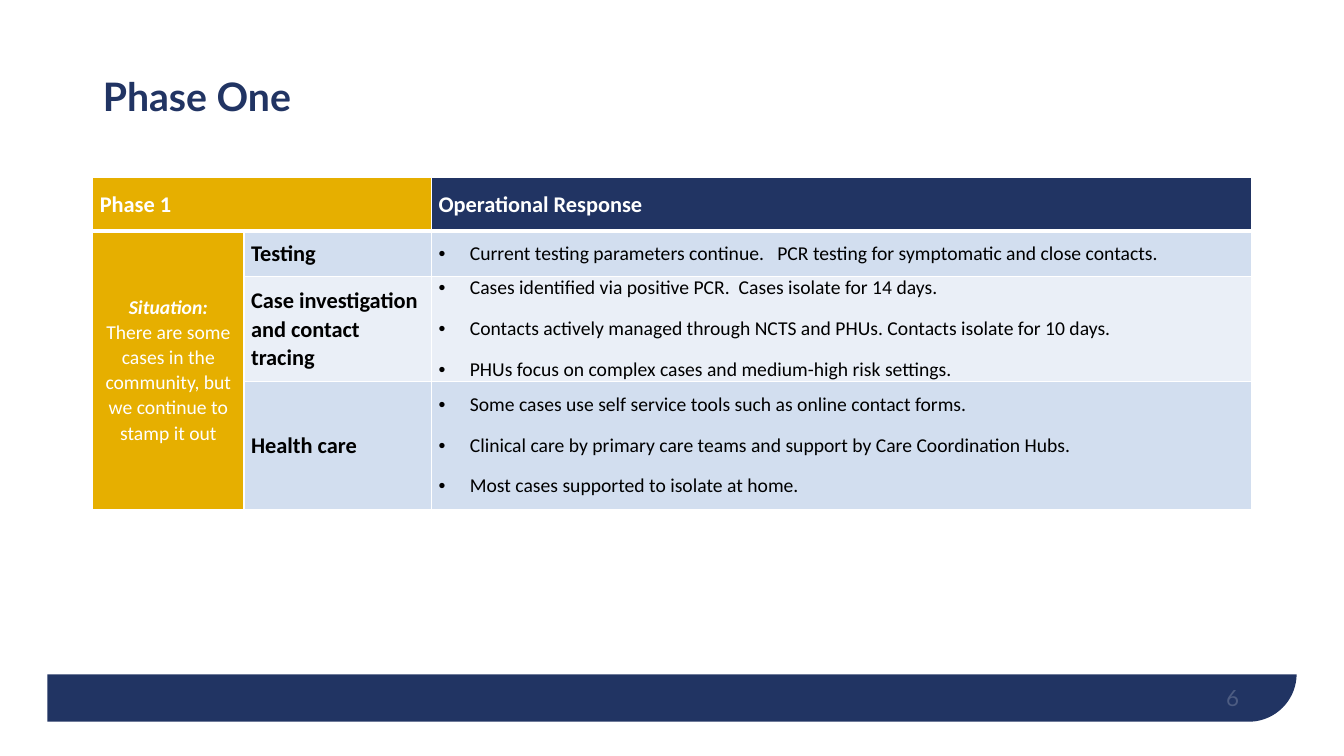
"""Build the Phase One slide with its operational response table."""
import pptx
import pptx.util
import pptx.dml.color
import pptx.enum.shapes
import pptx.enum.text
import pptx.oxml.ns
from lxml import etree

Inches, Pt = pptx.util.Inches, pptx.util.Pt
ALIGN, ANCHOR = pptx.enum.text.PP_ALIGN, pptx.enum.text.MSO_ANCHOR
SHAPE = pptx.enum.shapes.MSO_SHAPE
qn = pptx.oxml.ns.qn
NAVY, GOLD, WHITE, BLACK = "213463", "E6AF00", "FFFFFF", "000000"
BLUE, PALE = "D2DEEF", "EAEFF7"


def paint(target, color):
    if hasattr(target, "solid"):
        target.solid()
        target = target.fore_color
    target.rgb = pptx.dml.color.RGBColor.from_string(color)


def write(paragraph, text, size=16, font="Calibri", color=BLACK, bold=False, italic=False,
          align=ALIGN.LEFT, line=1.0, before=0, after=0):
    paragraph.alignment, paragraph.line_spacing = align, line
    paragraph.space_before, paragraph.space_after = Pt(before), Pt(after)
    run = paragraph.add_run()
    run.text = text
    run.font.size, run.font.name = Pt(size), font
    run.font.bold, run.font.italic = bold, italic
    paint(run.font.color, color)
    return run


deck = pptx.Presentation()
deck.slide_width, deck.slide_height = Inches(13.33), Inches(7.5)
slide = deck.slides.add_slide(deck.slide_layouts[5])

footer = slide.shapes.add_shape(SHAPE.ROUND_1_RECTANGLE, Inches(0.47), Inches(0.37), Inches(12.39), Inches(6.79))
footer.adjustments[0] = 0.07
footer.rotation = 180
footer.element.spPr.find(qn("a:xfrm")).set("flipH", "1")
page = slide.shapes.add_shape(SHAPE.RECTANGLE, 0, 0, Inches(13.33), Inches(6.69))
for panel, color in ((footer, NAVY), (page, WHITE)):
    panel.shadow.inherit = False
    paint(panel.fill, color)
    panel.line.fill.background()

number = slide.shapes.add_textbox(Inches(9.29), Inches(6.65), Inches(3), Inches(0.4)).text_frame
number.word_wrap = True
number.vertical_anchor = ANCHOR.BOTTOM
number.margin_left = number.margin_right = number.margin_top = number.margin_bottom = 0
digit = write(number.paragraphs[0], "6", font="Lato", color=WHITE, align=ALIGN.RIGHT)
tint = digit.font.fill._xPr.find(qn("a:solidFill"))[0]
etree.SubElement(tint, qn("a:alpha"), val="20000")

title = slide.shapes.title
title.left, title.top, title.width, title.height = Inches(0.92), Inches(0.4), Inches(10.43), Inches(1.17)
title.text_frame.vertical_anchor = ANCHOR.MIDDLE
title.text_frame.auto_size = pptx.enum.text.MSO_AUTO_SIZE.NONE
write(title.text_frame.paragraphs[0], "Phase One", size=28, font="Lato", color=NAVY, bold=True, line=0.9)
title.element.getparent().append(title.element)

responses = [
    ("Testing", BLUE, [
        "Current testing parameters continue.   PCR testing for symptomatic and close contacts."]),
    ("Case investigation and contact tracing", PALE, [
        "Cases identified via positive PCR.  Cases isolate for 14 days.",
        "Contacts actively managed through NCTS and PHUs. Contacts isolate for 10 days.",
        "PHUs focus on complex cases and medium-high risk settings."]),
    ("Health care", BLUE, [
        "Some cases use self service tools such as online contact forms.",
        "Clinical care by primary care teams and support by Care Coordination Hubs.",
        "Most cases supported to isolate at home."]),
]

table = slide.shapes.add_table(4, 3, Inches(0.92), Inches(1.76), Inches(11.49), Inches(3.22)).table
table.horz_banding = False
for column, width in zip(table.columns, (1.5, 1.86, 8.13)):
    column.width = Inches(width)
for row, height in zip(table.rows, (0.53, 0.45, 0.97, 1.27)):
    row.height = Inches(height)
table.cell(0, 0).merge(table.cell(0, 1))
table.cell(1, 0).merge(table.cell(3, 0))

for r in range(4):
    fills = (GOLD, GOLD, NAVY) if r == 0 else (GOLD,) + (responses[r - 1][1],) * 2
    for c, color in enumerate(fills):
        cell = table.cell(r, c)
        cell.vertical_anchor = ANCHOR.MIDDLE
        cell.margin_left = cell.margin_right = Inches(0.07)
        cell.margin_top = cell.margin_bottom = 0
        for side in ("lnL", "lnR", "lnT", "lnB"):
            thick = (r, side) in ((0, "lnB"), (1, "lnT"))
            border = etree.SubElement(cell._tc.get_or_add_tcPr(), qn("a:" + side), w=str(Pt(3 if thick else 1)))
            etree.SubElement(etree.SubElement(border, qn("a:solidFill")), qn("a:srgbClr"), val=WHITE)
        paint(cell.fill, color)

for c, heading in ((0, "Phase 1"), (2, "Operational Response")):
    write(table.cell(0, c).text_frame.paragraphs[0], heading, color=WHITE, bold=True, line=1.05)

situation = table.cell(1, 0).text_frame.paragraphs[0]
centred = dict(size=14, color=WHITE, align=ALIGN.CENTER, line=1.05, after=8)
write(situation, "Situation:", bold=True, italic=True, **centred)
situation.add_line_break()
write(situation, "There are some cases in the community, but we continue to stamp it out", **centred)

for r, (topic, color, actions) in enumerate(responses, start=1):
    write(table.cell(r, 1).text_frame.paragraphs[0], topic, bold=True, line=1.05, after=8)
    frame = table.cell(r, 2).text_frame
    for i, action in enumerate(actions):
        paragraph = frame.add_paragraph() if i else frame.paragraphs[0]
        layout = paragraph._p.get_or_add_pPr()
        layout.set("marL", str(Inches(0.31)))
        layout.set("indent", str(Inches(-0.31)))
        etree.SubElement(layout, qn("a:buFont"), typeface="Arial")
        etree.SubElement(layout, qn("a:buChar"), char="•")
        write(paragraph, action, size=14, before=6 if i else 0, after=6)

deck.save("out.pptx")
